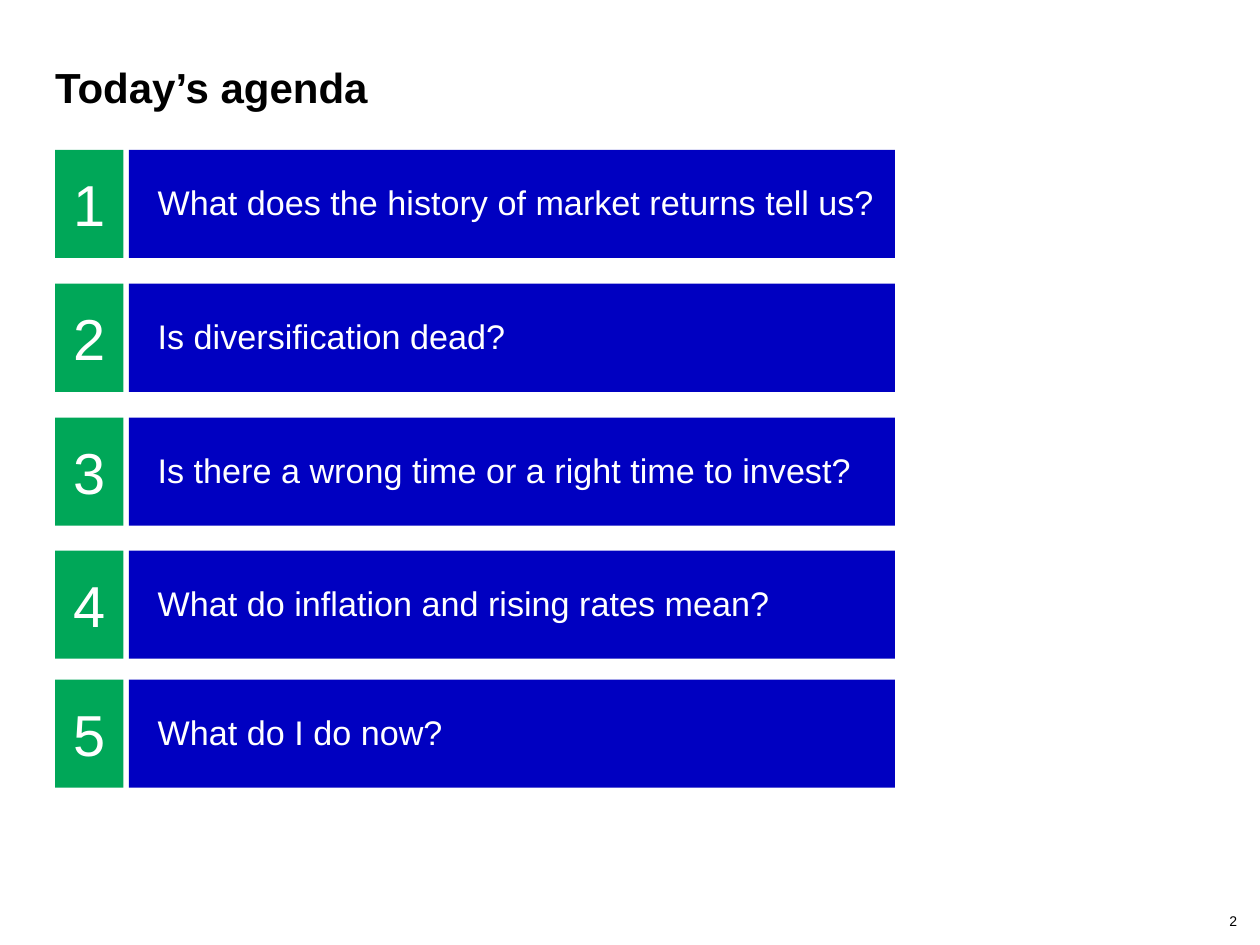
"""Build the agenda slide with five numbered questions."""
import pptx
import pptx.dml.color
import pptx.enum.shapes
import pptx.enum.text
import pptx.util

Cm = pptx.util.Cm
ALIGN = pptx.enum.text.PP_ALIGN
ANCHOR = pptx.enum.text.MSO_ANCHOR
COLORS = {"question": "0000C1", "number": "00A758", "light": "FFFFFF", "dark": "000000"}


def write_text(shape, text, size, color, align, anchor, margins, bold=False, spacing=1.0):
    frame = shape.text_frame
    frame.word_wrap = True
    frame.vertical_anchor = anchor
    left, top, right, bottom = margins
    frame.margin_left, frame.margin_top = Cm(left), Cm(top)
    frame.margin_right, frame.margin_bottom = Cm(right), Cm(bottom)
    paragraph = frame.paragraphs[0]
    paragraph.text = text
    paragraph.alignment = align
    paragraph.line_spacing = spacing
    paragraph.font.name = "Arial"
    paragraph.font.size = pptx.util.Pt(size)
    paragraph.font.bold = bold
    paragraph.font.color.rgb = pptx.dml.color.RGBColor.from_string(COLORS[color])


def add_block(slide, left, top, width, color):
    shape = slide.shapes.add_shape(
        pptx.enum.shapes.MSO_SHAPE.RECTANGLE, Cm(left), Cm(top), Cm(width), Cm(2.18)
    )
    shape.shadow.inherit = False
    shape.fill.solid()
    shape.fill.fore_color.rgb = pptx.dml.color.RGBColor.from_string(COLORS[color])
    shape.line.fill.background()
    return shape


presentation = pptx.Presentation()
presentation.slide_width = Cm(25.4)
presentation.slide_height = Cm(19.05)
slide = presentation.slides.add_slide(presentation.slide_layouts[6])

title = slide.shapes.add_textbox(Cm(1.11), Cm(1.32), Cm(18.8), Cm(1.6))
write_text(title, "Today’s agenda", 24, "dark", ALIGN.LEFT, ANCHOR.TOP,
           (0, 0, 0, 0), bold=True, spacing=0.95)

agenda = [
    (3.02, "What does the history of market returns tell us?"),
    (5.72, "Is diversification dead?"),
    (8.42, "Is there a wrong time or a right time to invest?"),
    (11.1, "What do inflation and rising rates mean?"),
    (13.7, "What do I do now?"),
]
for number, (top, question) in enumerate(agenda, start=1):
    question_block = add_block(slide, 2.6, top, 15.44, "question")
    write_text(question_block, question, 19.5, "light", ALIGN.LEFT, ANCHOR.MIDDLE,
               (0.58, 0.13, 0.25, 0.13), spacing=0.95)
    number_block = add_block(slide, 1.11, top, 1.38, "number")
    write_text(number_block, str(number), 33, "light", ALIGN.CENTER, ANCHOR.MIDDLE,
               (0.25, 0.13, 0.25, 0.13))

page_number = slide.shapes.add_textbox(Cm(24.15), Cm(18.26), Cm(0.79), Cm(0.48))
write_text(page_number, "2", 8, "dark", ALIGN.RIGHT, ANCHOR.BOTTOM, (0, 0, 0, 0))

presentation.save("out.pptx")
